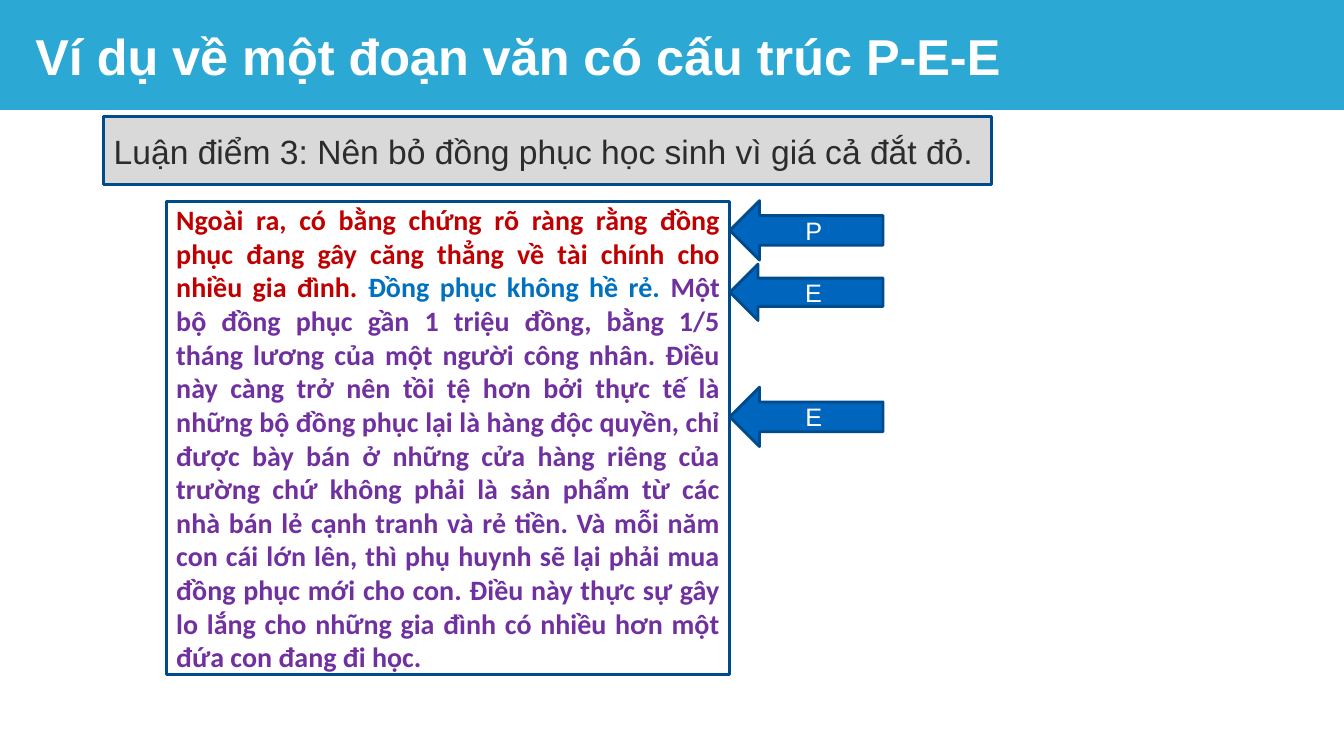
from dataclasses import dataclass

from pptx import Presentation
from pptx.dml.color import RGBColor
from pptx.enum.shapes import MSO_SHAPE as Shape
from pptx.enum.text import MSO_ANCHOR as Anchor, MSO_AUTO_SIZE as AutoSize, PP_ALIGN as Align
from pptx.util import Pt

BLUE, NAVY, WHITE = "0065BD", "004B8C", "FFFFFF"


@dataclass
class Span:
    text: str
    color: str
    size: float
    font: str = "Arial"
    bold: bool = False


@dataclass
class Box:
    left: float
    top: float
    width: float
    height: float
    spans: list[Span]
    fill: str | None = None
    line: str | None = NAVY
    kind: Shape = Shape.RECTANGLE
    align: Align = Align.LEFT


def rgb(value: str) -> RGBColor:
    return RGBColor.from_string(value)


def format_run(r, span: Span) -> None:
    r.font.name = span.font
    r.font.size = Pt(span.size)
    r.font.bold = span.bold
    r.font.color.rgb = rgb(span.color)


def draw_box(s, box: Box):
    sp = s.shapes.add_shape(box.kind, Pt(box.left), Pt(box.top), Pt(box.width), Pt(box.height))
    sp.shadow.inherit = False
    if box.fill:
        sp.fill.solid()
        sp.fill.fore_color.rgb = rgb(box.fill)
    else:
        sp.fill.background()
    if box.line:
        sp.line.color.rgb = rgb(box.line)
        sp.line.width = Pt(2)
    else:
        sp.line.fill.background()
    tf = sp.text_frame
    tf.word_wrap = True
    tf.vertical_anchor = Anchor.MIDDLE
    p = tf.paragraphs[0]
    p.alignment = box.align
    for span in box.spans:
        r = p.add_run()
        r.text = span.text
        format_run(r, span)
    return sp


def draw_title(s, span: Span) -> None:
    title = s.shapes.title
    title.left, title.top, title.width, title.height = Pt(18), Pt(8.64), Pt(931), Pt(61.2)
    tf = title.text_frame
    tf.text = span.text
    tf.word_wrap = True
    tf.auto_size = AutoSize.NONE
    tf.vertical_anchor = Anchor.MIDDLE
    p = tf.paragraphs[0]
    p.alignment = Align.LEFT
    format_run(p.runs[0], span)
    band = draw_box(s, Box(0, 0, 960, 78.48, [], "2CA8D4", None))
    title.element.addprevious(band.element)


def paragraph_span(text: str, color: str) -> Span:
    return Span(text, color, 20, "Calibri", True)


def arrow(label: str, top: float, height: float) -> Box:
    return Box(521.28, top, 109.44, height, [Span(label, WHITE, 18)], BLUE,
               kind=Shape.LEFT_ARROW, align=Align.CENTER)


EXAMPLE = Box(118.8, 144, 402.48, 337.68, [
    paragraph_span(
        "Ngoài ra, có bằng chứng rõ ràng rằng đồng phục đang gây căng thẳng "
        "về tài chính cho nhiều gia đình. ", "C00000"),
    paragraph_span("Đồng phục không hề rẻ. ", "0070C0"),
    paragraph_span(
        "Một bộ đồng phục gần 1 triệu đồng, bằng 1/5 tháng lương của một người công nhân. "
        "Điều này càng trở nên tồi tệ hơn bởi thực tế là những bộ đồng phục lại là hàng "
        "độc quyền, chỉ được bày bán ở những cửa hàng riêng của trường chứ không phải là "
        "sản phẩm từ các nhà bán lẻ cạnh tranh và rẻ tiền. "
        "Và mỗi năm con cái lớn lên, thì phụ huynh sẽ lại phải mua đồng phục mới cho con. "
        "Điều này thực sự gây lo lắng cho những gia đình có nhiều hơn một đứa con "
        "đang đi học.", "7030A0"),
], align=Align.JUSTIFY)

ARROWS = [arrow("P", 143.28, 42.48), arrow("E", 188.64, 40.32), arrow("E", 276.48, 42.48)]

CLAIM = Box(74.16, 83.52, 634.32, 48.24, [
    Span("Luận điểm 3: Nên bỏ đồng phục học sinh vì giá cả đắt đỏ.", "2C2C2C", 24),
], "D9D9D9")


def main() -> None:
    prs = Presentation()
    prs.slide_width, prs.slide_height = Pt(960), Pt(540)
    s = prs.slides.add_slide(prs.slide_layouts[5])
    draw_title(s, Span("Ví dụ về một đoạn văn có cấu trúc P-E-E", WHITE, 36, bold=True))
    for box in [EXAMPLE, *ARROWS, CLAIM]:
        draw_box(s, box)
    prs.save("out.pptx")


if __name__ == "__main__":
    main()
